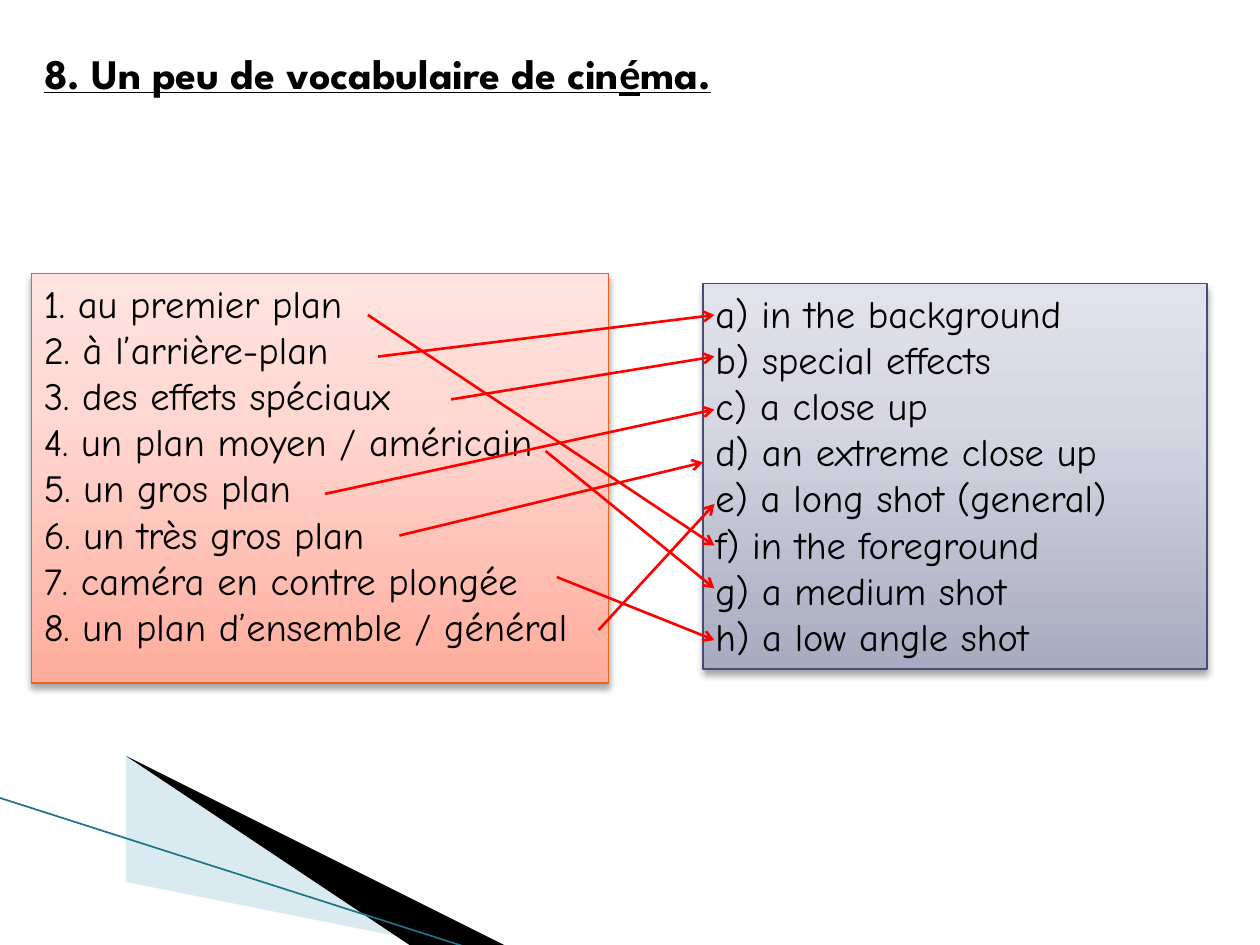
from lxml import etree
from pptx import Presentation
from pptx.dml.color import RGBColor
from pptx.enum.shapes import MSO_CONNECTOR, MSO_SHAPE
from pptx.enum.text import MSO_ANCHOR, MSO_AUTO_SIZE, PP_ALIGN
from pptx.oxml.ns import qn
from pptx.util import Inches, Pt

STRAIGHT, RECTANGLE = MSO_CONNECTOR.STRAIGHT, MSO_SHAPE.RECTANGLE
LEFT, TOP, MIDDLE = PP_ALIGN.LEFT, MSO_ANCHOR.TOP, MSO_ANCHOR.MIDDLE
NO_FIT, FIT_SHAPE = MSO_AUTO_SIZE.NONE, MSO_AUTO_SIZE.SHAPE_TO_FIT_TEXT
TITLE_ONLY = 5

THEME = {
    "text": "000000", "arrow": "FF0000",
    "wedge_light": "A0CBDC", "wedge_dark": "000000", "edge": "1B7587",
    "french": {"line": "EB641B", "stops": [(0, "FFAC9C"), (65, "FFD8D2"), (100, "FFE4DF")]},
    "english": {"line": "474B78", "stops": [(0, "A8AAC0"), (65, "D6D7E3"), (100, "E2E2EC")]},
    "title_font": "League Spartan", "accent_font": "Calibri", "body_font": "Comic Neue",
    "title_size": 24, "body_size": 22,
}

# Content
TITLE = [("8. Un peu de vocabulaire de cin", "title_font"),
         ("é", "accent_font"), ("ma.", "title_font")]
# French term, arrow start (x, y), letter of its translation
TERMS = [
    ("1. au premier plan", (2.92, 2.5), "f"),
    ("2. à l’arrière-plan", (3, 2.83), "a"),
    ("3. des effets spéciaux", (3.58, 3.17), "b"),
    ("4. un plan moyen / américain", (4.33, 3.58), "g"),
    ("5. un gros plan", (2.58, 3.92), "c"),
    ("6. un très gros plan", (3.17, 4.25), "d"),
    ("7. caméra en contre plongée", (4.42, 4.58), "h"),
    ("8. un plan d’ensemble / général", (4.75, 5), "e"),
]
# English meaning, arrow end (x, y)
MEANINGS = [
    ("a) in the background", (5.67, 2.5)),
    ("b) special effects", (5.67, 2.83)),
    ("c) a close up", (5.67, 3.25)),
    ("d) an extreme close up", (5.58, 3.67)),
    ("e) a long shot (general)", (5.67, 4)),
    ("f) in the foreground", (5.67, 4.33)),
    ("g) a medium shot", (5.67, 4.67)),
    ("h) a low angle shot", (5.67, 5.08)),
]
WEDGES = [
    ("wedge_light", 40, [(0.55, 6.51), (5.95, 7.51), (4.56, 7.51), (0.55, 6.5)]),
    ("wedge_dark", 100, [(0.53, 6.49), (4.57, 7.51), (3.72, 7.52), (0.54, 6.5)]),
]


def rgb(value):
    return RGBColor.from_string(value)


def add_element(parent, tag, **attributes):
    values = {name: str(value) for name, value in attributes.items()}
    return etree.SubElement(parent, qn(tag), values)


def add_span(para, text, font, size):
    span = para.add_run()
    span.text = text
    span.font.name = font
    span.font.size = Pt(size)
    span.font.color.rgb = rgb(THEME["text"])
    return span


def add_wedge(slide, color, opacity, points):
    builder = slide.shapes.build_freeform(*points[0], scale=Inches(1))
    builder.add_line_segments(points[1:], close=True)
    wedge = builder.convert_to_shape()
    wedge.shadow.inherit = False
    wedge.fill.solid()
    wedge.fill.fore_color.rgb = rgb(THEME[color])
    wedge.line.fill.background()
    if opacity < 100:
        for tone in wedge._element.spPr.find(qn("a:solidFill")):
            add_element(tone, "a:alpha", val=opacity * 1000)


def add_line(slide, start, end, color, width, arrow=False):
    line = slide.shapes.add_connector(STRAIGHT, *map(Inches, start + end))
    line.line.color.rgb = rgb(THEME[color])
    line.line.width = Pt(width)
    if arrow:
        add_element(line.line._get_or_add_ln(), "a:tailEnd", type="arrow")
    add_element(line._element.spPr, "a:effectLst")


def add_word_box(slide, area, style, words, fit):
    box = slide.shapes.add_shape(RECTANGLE, *map(Inches, area))
    box.line.color.rgb = rgb(style["line"])
    box.line.width = Pt(0.75)

    # Bottom-to-top gradient
    box.fill.gradient()
    gradient = box._element.spPr.find(qn("a:gradFill"))
    for child in list(gradient):
        gradient.remove(child)
    stops = add_element(gradient, "a:gsLst")
    for position, color in style["stops"]:
        stop = add_element(stops, "a:gs", pos=position * 1000)
        add_element(stop, "a:srgbClr", val=color)
    add_element(gradient, "a:lin", ang=270 * 60000, scaled=0)

    # Soft shadow below
    box.shadow.inherit = False
    effects = box._element.spPr.find(qn("a:effectLst"))
    shadow = add_element(effects, "a:outerShdw", blurRad=Pt(4), dist=Pt(3),
                         dir=90 * 60000, rotWithShape=0)
    tone = add_element(shadow, "a:srgbClr", val="000000")
    add_element(tone, "a:alpha", val=35000)

    # One word per paragraph
    frame = box.text_frame
    frame.word_wrap = True
    frame.auto_size = fit
    frame.vertical_anchor = TOP
    for index, word in enumerate(words):
        para = frame.add_paragraph() if index else frame.paragraphs[0]
        para.alignment = LEFT
        add_span(para, word, THEME["body_font"], THEME["body_size"])


def add_title(slide):
    title = slide.shapes.title
    title.left, title.top, title.width, title.height = map(Inches, (0.25, 0.33, 6.26, 0.5))
    frame = title.text_frame
    frame.word_wrap = False
    frame.auto_size = FIT_SHAPE
    frame.vertical_anchor = MIDDLE
    para = frame.paragraphs[0]
    para.alignment = LEFT
    for text, font in TITLE:
        span = add_span(para, text, THEME[font], THEME["title_size"])
        span.font.bold = span.font.underline = True


def main():
    deck = Presentation()
    deck.slide_width, deck.slide_height = Inches(10), Inches(7.5)
    slide = deck.slides.add_slide(deck.slide_layouts[TITLE_ONLY])

    # Corner decoration
    for wedge in WEDGES:
        add_wedge(slide, *wedge)
    add_line(slide, (-0.01, 6.33), (3.71, 7.52), "edge", 0.95)

    # Title and word lists
    add_title(slide)
    add_word_box(slide, (0.25, 2.17, 4.58, 3.25), THEME["french"],
                 [term for term, _, _ in TERMS], NO_FIT)
    add_word_box(slide, (5.58, 2.25, 4, 3.06), THEME["english"],
                 [meaning for meaning, _ in MEANINGS], FIT_SHAPE)

    # Arrows from each term to its meaning
    targets = {meaning[0]: end for meaning, end in MEANINGS}
    for _, start, letter in TERMS:
        add_line(slide, start, targets[letter], "arrow", 1.5, arrow=True)

    deck.save("out.pptx")


if __name__ == "__main__":
    main()
